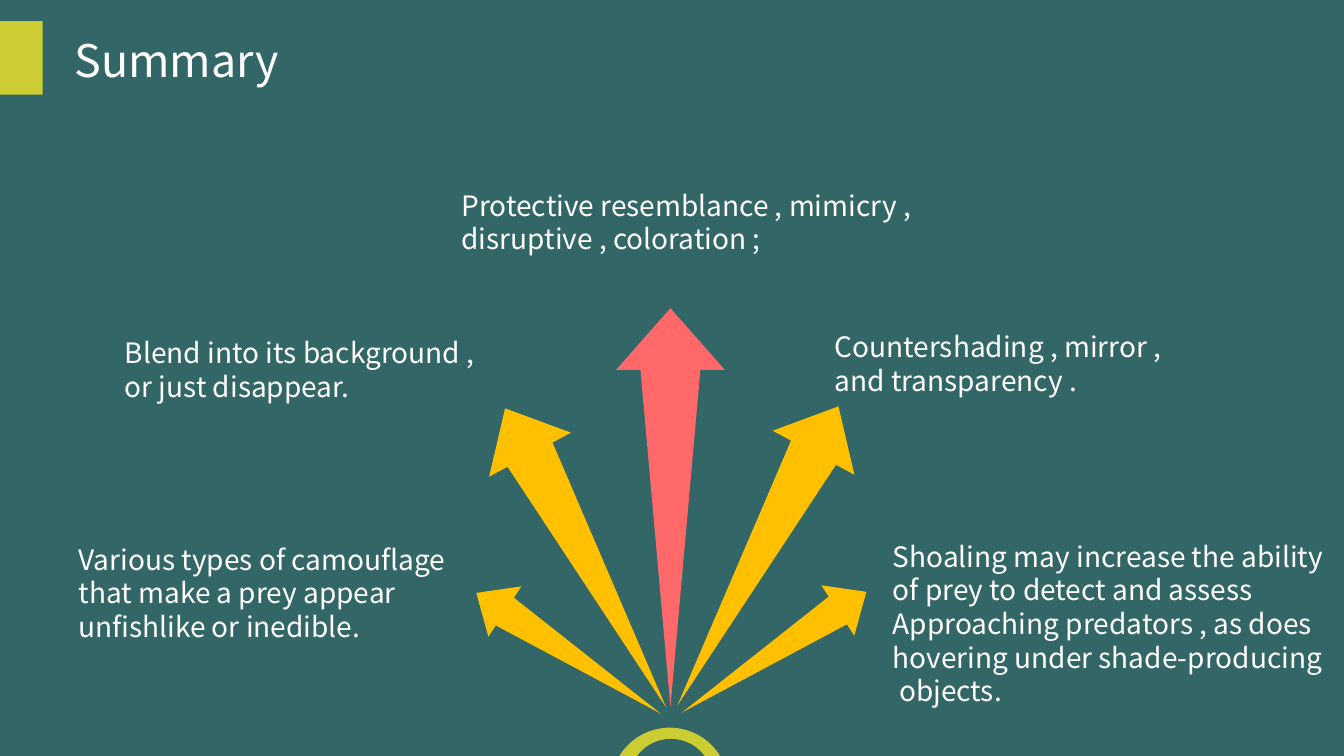
from dataclasses import dataclass

from pptx import Presentation
from pptx.dml.color import RGBColor
from pptx.enum.shapes import MSO_SHAPE
from pptx.enum.text import MSO_ANCHOR
from pptx.util import Pt

OVAL = MSO_SHAPE.OVAL
RECT = MSO_SHAPE.RECTANGLE
TOP = MSO_ANCHOR.TOP

TEAL = RGBColor(0x33, 0x66, 0x66)
LIME = RGBColor(0xCC, 0xCC, 0x33)
CORAL = RGBColor(0xFF, 0x69, 0x69)
AMBER = RGBColor(0xFF, 0xC0, 0x00)
WHITE = RGBColor(0xFF, 0xFF, 0xFF)
FONT = "Noto Sans CJK SC"

UNIT = 1000
RATIO = 3.66
OUTLINE = [(500, 0), (1000, 155), (775, 155), (500, 1000), (225, 155), (0, 155)]


@dataclass
class Arrow:
    mid_x: float
    mid_y: float
    width: float
    angle: float
    color: RGBColor


@dataclass
class Note:
    left: float
    top: float
    width: float
    lines: list[str]


@dataclass
class Block:
    kind: MSO_SHAPE
    left: float
    top: float
    width: float
    height: float
    color: RGBColor


ARROWS = [
    Arrow(478.9, 362.5, 77.8, 0, CORAL),
    Arrow(541.4, 397.1, 66.3, 28.3, AMBER),
    Arrow(553, 465.8, 43, 56.8, AMBER),
    Arrow(418.3, 398.5, 66.3, 331.7, AMBER),
    Arrow(406.1, 466.6, 43, 303.2, AMBER),
]
BLOCKS = [
    Block(OVAL, 436.3, 519.8, 84.2, 84.2, LIME),
    Block(OVAL, 449.3, 527.8, 59.8, 59.8, TEAL),
    Block(RECT, 0, 15.1, 30.5, 52.6, LIME),
]
NOTES = [
    Note(82.1, 236.2, 280, ["Blend into its background ,", "or just disappear."]),
    Note(322.6, 131, 350.6,
         ["Protective resemblance , mimicry ,", "disruptive , coloration ;"]),
    Note(589, 231.8, 262.8, ["Countershading , mirror ,", "and transparency ."]),
    Note(630.7, 381.6, 329.3,
         ["Shoaling may increase the ability", "of prey to detect and assess",
          "Approaching predators , as does", "hovering under shade-producing",
          " objects."]),
    Note(49, 383.8, 293.8,
         ["Various types of camouflage", "that make a prey appear",
          "unfishlike or inedible."]),
]


def paint(shape, color: RGBColor) -> None:
    shape.fill.solid()
    shape.fill.fore_color.rgb = color
    shape.line.fill.background()
    shape.shadow.inherit = False


def add_arrow(slide, arrow: Arrow) -> None:
    width = Pt(arrow.width)
    height = Pt(arrow.width * RATIO)
    pen = slide.shapes.build_freeform(
        *OUTLINE[0], scale=(width / UNIT, height / UNIT))
    pen.add_line_segments(OUTLINE[1:], close=True)
    shape = pen.convert_to_shape(
        Pt(arrow.mid_x) - width // 2, Pt(arrow.mid_y) - height // 2)
    shape.rotation = arrow.angle
    paint(shape, arrow.color)


def add_block(slide, block: Block) -> None:
    shape = slide.shapes.add_shape(
        block.kind, Pt(block.left), Pt(block.top),
        Pt(block.width), Pt(block.height))
    paint(shape, block.color)


def add_text(slide, note: Note, *, size: float = 20, pitch: float = 24,
             font: str = FONT, color: RGBColor = WHITE) -> None:
    height = pitch * len(note.lines) + 7.2
    box = slide.shapes.add_textbox(
        Pt(note.left), Pt(note.top), Pt(note.width), Pt(height))
    frame = box.text_frame
    frame.word_wrap = True
    frame.vertical_anchor = TOP
    frame.text = "\n".join(note.lines)
    for para in frame.paragraphs:
        para.line_spacing = Pt(pitch)
        para.font.size = Pt(size)
        para.font.name = font
        para.font.color.rgb = color


def main() -> None:
    deck = Presentation()
    deck.slide_width = Pt(960)
    deck.slide_height = Pt(540)
    slide = deck.slides.add_slide(deck.slide_layouts[6])
    slide.background.fill.solid()
    slide.background.fill.fore_color.rgb = TEAL
    for arrow in ARROWS:
        add_arrow(slide, arrow)
    for block in BLOCKS:
        add_block(slide, block)
    for note in NOTES:
        add_text(slide, note)
    add_text(slide, Note(46.2, 19.4, 171, ["Summary"]), size=32, pitch=39)
    deck.save("out.pptx")


if __name__ == "__main__":
    main()
